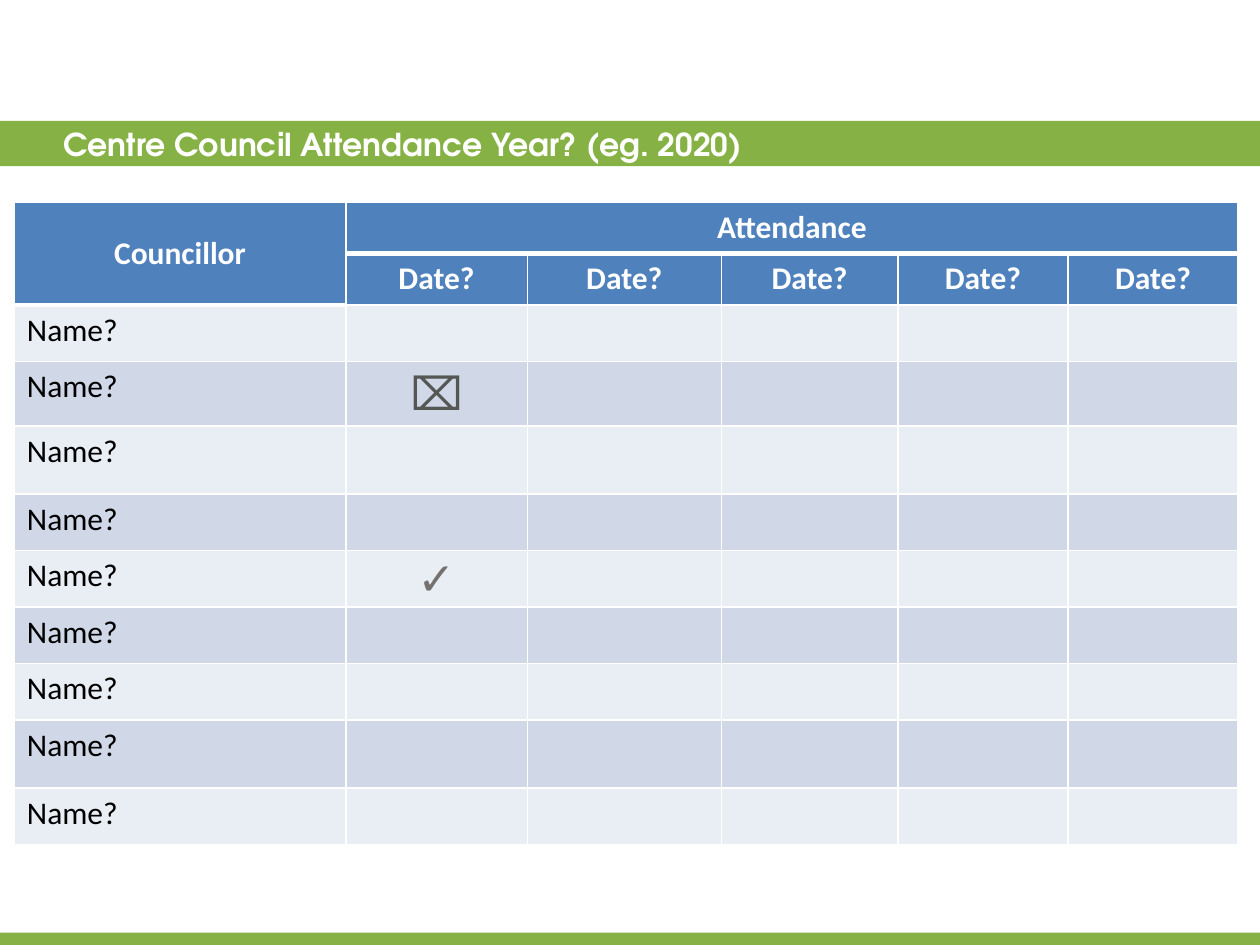
from lxml import etree
from pptx import Presentation
from pptx import util as u
from pptx.dml.color import RGBColor
from pptx.enum import shapes, text
from pptx.oxml import ns

GREEN = RGBColor(0x86, 0xB2, 0x45)
BLUE = RGBColor(0x4F, 0x81, 0xBD)
PALE = RGBColor(0xE9, 0xED, 0xF4)
MID = RGBColor(0xD0, 0xD8, 0xE8)
WHITE = RGBColor(0xFF, 0xFF, 0xFF)
BLACK = RGBColor(0x00, 0x00, 0x00)
CROSS_GREY = RGBColor(0x55, 0x57, 0x54)
TICK_GREY = RGBColor(0x74, 0x71, 0x6E)

COLUMN_WIDTHS = [6.68, 3.66, 3.91, 3.56, 3.43, 3.43]
ROW_HEIGHTS = [1.04, 1.04, 1.14, 1.3, 1.37, 1.14, 1.14, 1.14, 1.14, 1.37, 1.14]
HEADER_ROWS = 2
MARKS = {(3, 1): ("⌧", CROSS_GREY), (6, 1): ("✓", TICK_GREY)}


class SlideBuilder:
    title_font = "TeX Gyre Adventor"
    body_font = "Calibri"
    mark_font = "Arial"
    body_size = 18
    mark_size = 26

    def __init__(self, deck):
        self.page = deck.slides.add_slide(deck.slide_layouts[5])

    def format_text(self, frame, words, font, size, color, bold, align):
        frame.text = words
        para = frame.paragraphs[0]
        para.alignment = align
        for span in para.runs:
            span.font.name = font
            span.font.size = u.Pt(size)
            span.font.bold = bold
            span.font.color.rgb = color

    def title(self, words, left, top, width, height):
        box = self.page.shapes.title
        box.left, box.top, box.width, box.height = map(u.Cm, (left, top, width, height))
        frame = box.text_frame
        frame.margin_left = frame.margin_right = 0
        frame.vertical_anchor = text.MSO_ANCHOR.MIDDLE
        frame.auto_size = text.MSO_AUTO_SIZE.NONE
        self.format_text(frame, words, self.title_font, 18, WHITE, True, text.PP_ALIGN.LEFT)

    def bar(self, top, height):
        box = self.page.shapes.add_shape(
            shapes.MSO_SHAPE.RECTANGLE, 0, u.Cm(top), u.Cm(25.4), u.Cm(height))
        box.shadow.inherit = False
        box.fill.solid()
        box.fill.fore_color.rgb = GREEN
        box.line.fill.background()
        self.page.shapes.title.element.addprevious(box.element)

    def table(self, left, top, widths, heights):
        frame = self.page.shapes.add_table(
            len(heights), len(widths), u.Cm(left), u.Cm(top),
            u.Cm(sum(widths)), u.Cm(sum(heights)))
        for column, width in zip(frame.table.columns, widths):
            column.width = u.Cm(width)
        for row, height in zip(frame.table.rows, heights):
            row.height = u.Cm(height)
        return frame.table

    def cell(self, cell, fill, bottom=1):
        properties = cell._tc.get_or_add_tcPr()
        for side, points in (("L", 1), ("R", 1), ("T", 1), ("B", bottom)):
            border = etree.SubElement(properties, ns.qn(f"a:ln{side}"), w=str(u.Pt(points)))
            solid = etree.SubElement(border, ns.qn("a:solidFill"))
            etree.SubElement(solid, ns.qn("a:srgbClr"), val=str(WHITE))
        cell.fill.solid()
        cell.fill.fore_color.rgb = fill

    def header(self, cell, words):
        self.format_text(cell.text_frame, words, self.body_font, self.body_size,
                         WHITE, True, text.PP_ALIGN.CENTER)

    def name(self, cell, words):
        self.format_text(cell.text_frame, words, self.body_font, self.body_size,
                         BLACK, False, text.PP_ALIGN.LEFT)

    def mark(self, cell, symbol, color):
        cell.vertical_anchor = text.MSO_ANCHOR.MIDDLE
        cell.margin_left = cell.margin_right = cell.margin_top = u.Cm(0.03)
        cell.margin_bottom = 0
        self.format_text(cell.text_frame, symbol, self.mark_font, self.mark_size,
                         color, False, text.PP_ALIGN.CENTER)


def main():
    deck = Presentation()
    deck.slide_width, deck.slide_height = u.Cm(25.4), u.Cm(19.05)
    builder = SlideBuilder(deck)
    builder.bar(18.8, 0.25)
    builder.bar(2.44, 0.91)
    builder.title("Centre Council Attendance Year? (eg. 2020)", 1.27, 2.44, 22.12, 0.91)

    table = builder.table(0.29, 4.07, COLUMN_WIDTHS, ROW_HEIGHTS)
    for row in range(len(ROW_HEIGHTS)):
        for column in range(len(COLUMN_WIDTHS)):
            if row < HEADER_ROWS:
                heavy = row == 0 or column == 0
                builder.cell(table.cell(row, column), BLUE, 3 if heavy else 1)
            else:
                builder.cell(table.cell(row, column), MID if row % 2 else PALE)

    councillor = table.cell(0, 0)
    councillor.merge(table.cell(1, 0))
    councillor.vertical_anchor = text.MSO_ANCHOR.MIDDLE
    builder.header(councillor, "Councillor")
    attendance = table.cell(0, 1)
    attendance.merge(table.cell(0, len(COLUMN_WIDTHS) - 1))
    builder.header(attendance, "Attendance")
    for column in range(1, len(COLUMN_WIDTHS)):
        builder.header(table.cell(1, column), "Date?")
    for row in range(HEADER_ROWS, len(ROW_HEIGHTS)):
        builder.name(table.cell(row, 0), "Name?")
    for position, (symbol, color) in MARKS.items():
        builder.mark(table.cell(*position), symbol, color)

    deck.save("out.pptx")


if __name__ == "__main__":
    main()
